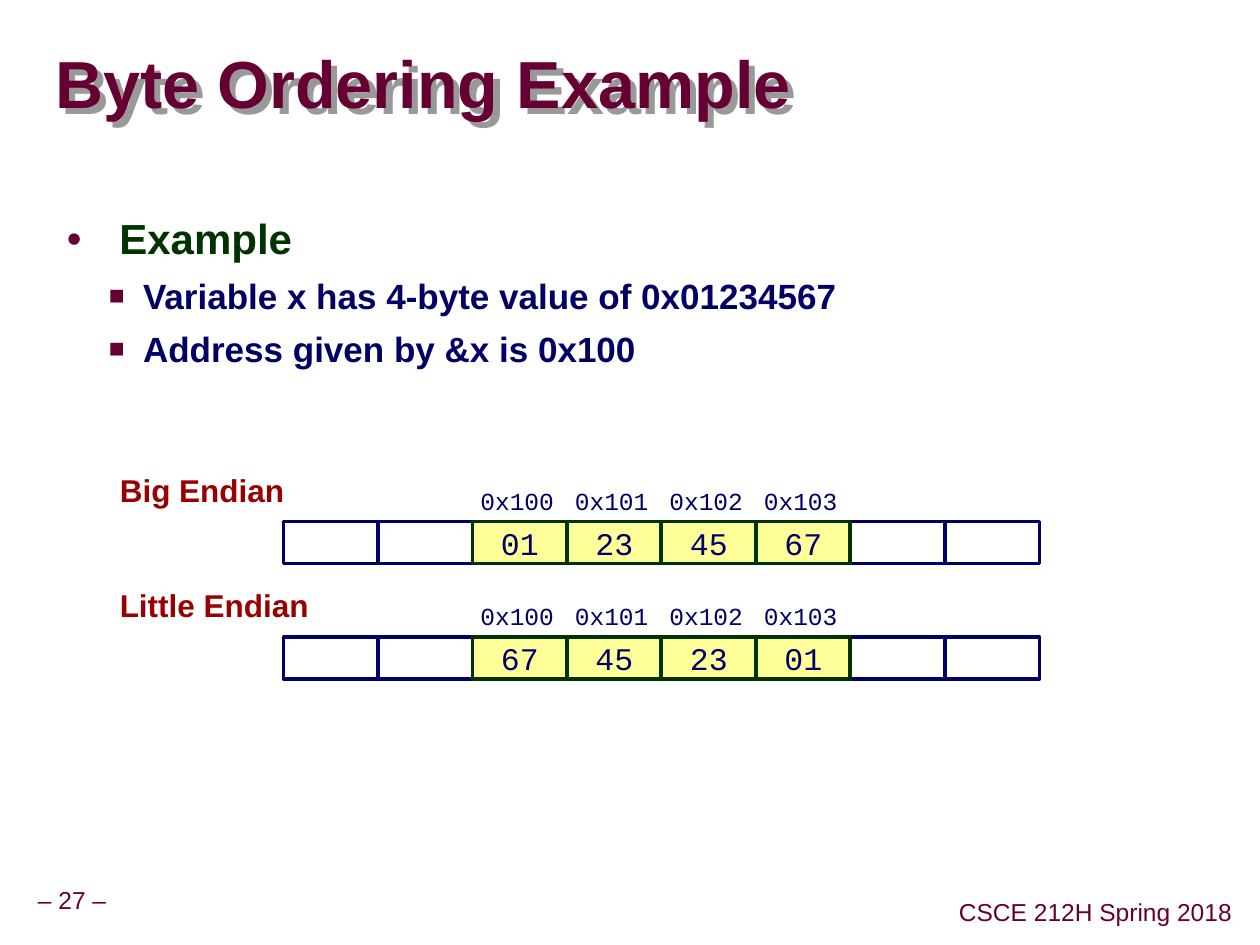
from dataclasses import dataclass

from lxml.etree import SubElement
from pptx import Presentation
from pptx.dml.color import RGBColor
from pptx.enum.shapes import MSO_SHAPE
from pptx.enum.text import MSO_ANCHOR, MSO_AUTO_SIZE, PP_ALIGN
from pptx.oxml.ns import qn
from pptx.util import Pt


@dataclass(frozen=True)
class Theme:
    sans: str = "Arial"
    mono: str = "Courier New"
    maroon: str = "660033"
    green: str = "003300"
    navy: str = "000066"
    red: str = "980002"
    white: str = "FFFFFF"
    yellow: str = "FFFF99"
    shadow: str = "999999"
    title_size: int = 38
    heading_size: int = 24
    bullet_size: int = 20
    label_size: int = 18
    small_size: int = 14


THEME = Theme()
CELL_WIDTH, CELL_HEIGHT = 54, 24
MEMORY_LEFT, FIRST_ROW_TOP, ROW_PITCH = 162, 298, 66
CELL_COUNT, FIRST_BYTE = 8, 2
ADDRESSES = ["0x100", "0x101", "0x102", "0x103"]
BIG_ENDIAN = ["01", "23", "45", "67"]


def place(shape, left, top, width, height):
    shape.left, shape.top = Pt(left), Pt(top)
    shape.width, shape.height = Pt(width), Pt(height)


def set_frame(frame, insets, anchor=MSO_ANCHOR.MIDDLE, wrap=True):
    frame.margin_left, frame.margin_top, frame.margin_right, frame.margin_bottom = map(Pt, insets)
    frame.vertical_anchor = anchor
    frame.word_wrap = wrap
    frame.auto_size = MSO_AUTO_SIZE.NONE


def style(para, size, color, face=THEME.sans, bold=False, align=PP_ALIGN.LEFT, spacing=None):
    para.alignment = align
    if spacing:
        para.line_spacing = spacing
    para.font.name, para.font.size, para.font.bold = face, Pt(size), bold
    para.font.color.rgb = RGBColor.from_string(color)


def add_bullet(para, char, margin, hanging, percent):
    properties = para._p.get_or_add_pPr()
    properties.set("marL", str(Pt(margin)))
    properties.set("indent", str(-Pt(hanging)))
    color = SubElement(properties, qn("a:buClr"))
    SubElement(color, qn("a:srgbClr"), val=THEME.maroon)
    SubElement(properties, qn("a:buSzPct"), val=str(percent * 1000))
    SubElement(properties, qn("a:buFont"), typeface=THEME.sans)
    SubElement(properties, qn("a:buChar"), char=char)


def add_title_shadow(shape):
    effects = SubElement(shape._element.spPr, qn("a:effectLst"))
    shadow = SubElement(effects, qn("a:outerShdw"), dist=str(Pt(5)), dir="2700000",
                        algn="ctr", rotWithShape="0")
    SubElement(shadow, qn("a:srgbClr"), val=THEME.shadow)


def add_title(page, text):
    title = page.shapes.title
    place(title, 31.5, 19.5, 686, 61)
    set_frame(title.text_frame, (0, 0, 0, 0))
    title.text_frame.text = text
    style(title.text_frame.paragraphs[0], THEME.title_size, THEME.maroon, bold=True, spacing=0.87)
    add_title_shadow(title)


def add_body(page, heading, points):
    body = page.placeholders[1]
    place(body, 31, 120, 622, 379)
    frame = body.text_frame
    set_frame(frame, (7.2, 3.6, 7.2, 3.6), MSO_ANCHOR.TOP)
    para = frame.paragraphs[0]
    para.text = heading
    para.space_before = Pt(0)
    add_bullet(para, "•", 30, 30, 100)
    style(para, THEME.heading_size, THEME.green, bold=True, spacing=0.95)
    for point in points:
        para = frame.add_paragraph()
        para.text = point
        para.level = 1
        para.space_before = Pt(6)
        add_bullet(para, "■", 43.5, 19.5, 75)
        style(para, THEME.bullet_size, THEME.navy, bold=True)


def add_text(page, text, bounds, insets, anchor=MSO_ANCHOR.MIDDLE, wrap=False, **look):
    box = page.shapes.add_textbox(*map(Pt, bounds))
    set_frame(box.text_frame, insets, anchor, wrap)
    para = box.text_frame.paragraphs[0]
    para.text = text
    style(para, **look)


def add_cell(page, column, top, fill, outline, weight, value=""):
    left = MEMORY_LEFT + column * CELL_WIDTH
    cell = page.shapes.add_shape(MSO_SHAPE.RECTANGLE, Pt(left), Pt(top),
                                 Pt(CELL_WIDTH), Pt(CELL_HEIGHT))
    cell.shadow.inherit = False
    cell.fill.solid()
    cell.fill.fore_color.rgb = RGBColor.from_string(fill)
    cell.line.color.rgb = RGBColor.from_string(outline)
    cell.line.width = Pt(weight)
    if value:
        set_frame(cell.text_frame, (0, 0, 0, 0), wrap=False)
        para = cell.text_frame.paragraphs[0]
        para.text = value
        style(para, THEME.label_size, THEME.navy, THEME.mono, align=PP_ALIGN.CENTER)


def add_memory_row(page, name, values, top):
    add_text(page, name, (66, top - 30, 141, 26), (2.5, 2.5, 5, 2.5), MSO_ANCHOR.TOP, True,
             size=THEME.label_size, color=THEME.red, bold=True, spacing=0.95)
    byte_columns = range(FIRST_BYTE, FIRST_BYTE + len(values))

    # Unused cells first, so the byte outlines lie on top
    for column in range(CELL_COUNT):
        if column not in byte_columns:
            add_cell(page, column, top, THEME.white, THEME.navy, 2)

    # Bytes with their addresses above
    for column, address, value in zip(byte_columns, ADDRESSES, values):
        left = MEMORY_LEFT + column * CELL_WIDTH
        add_text(page, address, (left, top - CELL_HEIGHT, CELL_WIDTH, CELL_HEIGHT),
                 (4.5, 4.5, 7, 4.5), size=THEME.small_size, color=THEME.navy, face=THEME.mono)
        add_cell(page, column, top, THEME.yellow, THEME.green, 2.25, value)


def add_footer(page, text, bounds):
    add_text(page, text, bounds, (3.6, 3.6, 3.6, 3.6), size=THEME.small_size,
             color=THEME.maroon, align=PP_ALIGN.CENTER, spacing=0.9)


def main():
    deck = Presentation()
    deck.slide_width, deck.slide_height = Pt(720), Pt(540)
    page = deck.slides.add_slide(deck.slide_layouts[1])

    # Title and list
    add_title(page, "Byte Ordering Example")
    add_body(page, "Example", ["Variable x has 4-byte value of 0x01234567",
                               "Address given by &x is 0x100"])

    # Memory layouts
    rows = [("Big Endian", BIG_ENDIAN), ("Little Endian", BIG_ENDIAN[::-1])]
    for index, (name, values) in enumerate(rows):
        add_memory_row(page, name, values, FIRST_ROW_TOP + index * ROW_PITCH)

    # Footer
    add_footer(page, "– 27 –", (17.5, 504, 47.5, 22))
    add_footer(page, "CSCE 212H Spring 2018", (544, 511, 164, 22))

    deck.save("out.pptx")


if __name__ == "__main__":
    main()
